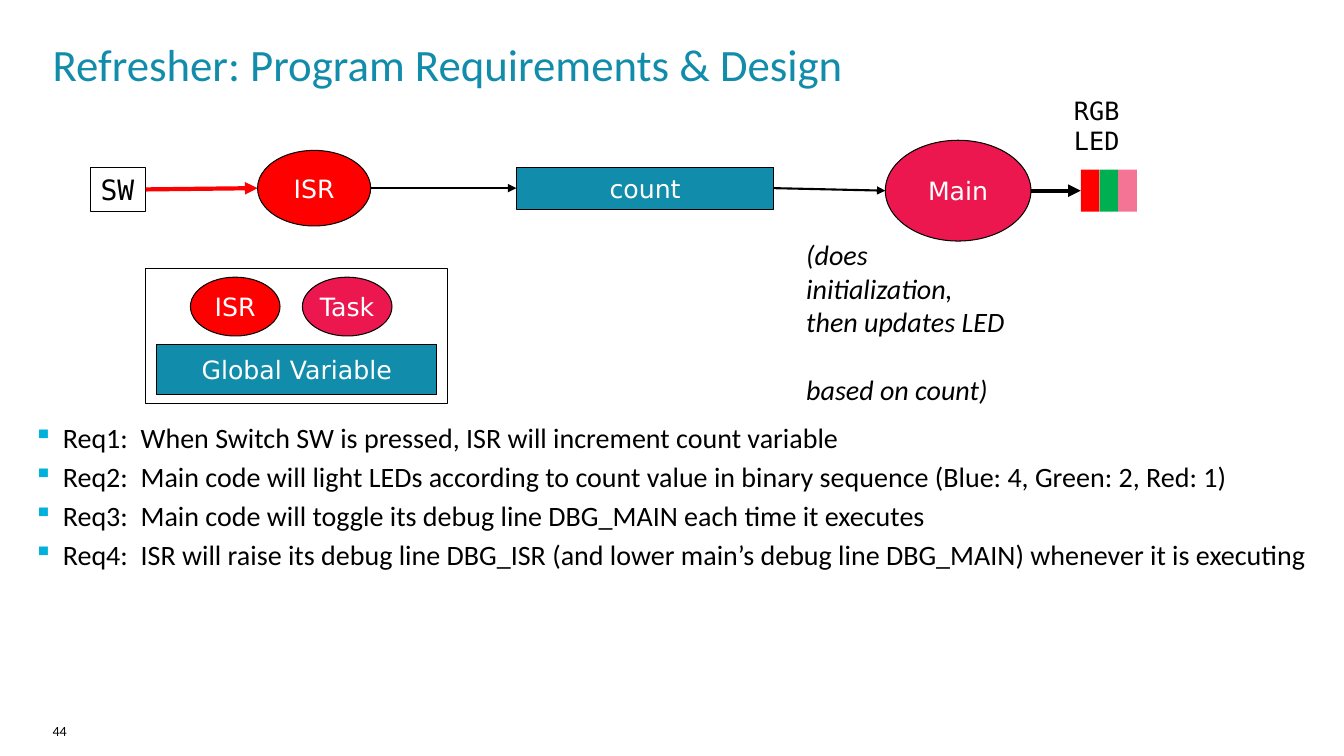
import pptx
import pptx.dml.color
import pptx.enum.shapes
import pptx.enum.text
import pptx.oxml
import pptx.oxml.ns
import pptx.util

SHAPE = pptx.enum.shapes.MSO_SHAPE
ANCHOR = pptx.enum.text.MSO_ANCHOR
ALIGN = pptx.enum.text.PP_ALIGN
RED, PINK, TEAL, BLACK, WHITE = "FF0000", "ED174F", "128CAB", "000000", "FFFFFF"


def colour(code):
    return pptx.dml.color.RGBColor.from_string(code)


def add_xml(parent, markup):
    parent.append(pptx.oxml.parse_xml(
        markup.replace("/>", " " + pptx.oxml.ns.nsdecls("a") + "/>")))


class Board:
    COLUMNS, ROWS = 120, 90
    BODY, LABEL, MONO = "Calibri", "DejaVu Sans", "DejaVu Sans Mono"

    def __init__(self, deck):
        self.slide = deck.slides.add_slide(deck.slide_layouts[6])
        self.column = deck.slide_width / self.COLUMNS
        self.row = deck.slide_height / self.ROWS

    def place(self, left, top, width, height):
        return (round(left * self.column), round(top * self.row),
                round(width * self.column), round(height * self.row))

    def add_words(self, paragraph, words, size, font, ink, italic=False):
        for number, line in enumerate(words.split("\n")):
            if number:
                paragraph.add_line_break()
            run = paragraph.add_run()
            run.text = line
            run.font.size = pptx.util.Pt(size)
            run.font.name = font
            run.font.italic = italic
            run.font.color.rgb = colour(ink)

    def text(self, area, lines, size, font=BODY, ink=BLACK, italic=False,
             inset=True, wrap=True, gaps=(), bullet=None):
        frame = self.slide.shapes.add_textbox(*self.place(*area)).text_frame
        frame.word_wrap = wrap
        if not inset:
            frame.margin_left = frame.margin_top = 0
            frame.margin_right = frame.margin_bottom = 0
        for number, line in enumerate(lines):
            paragraph = frame.add_paragraph() if number else frame.paragraphs[0]
            if bullet:
                self.mark(paragraph, bullet)
            if number and gaps:
                paragraph.space_before = pptx.util.Pt(gaps[number - 1])
            self.add_words(paragraph, line, size, font, ink, italic)

    def mark(self, paragraph, bullet):
        properties = paragraph._p.get_or_add_pPr()
        indent = pptx.util.Inches(0.29)
        properties.set("marL", str(indent))
        properties.set("indent", str(-indent))
        bullet_colour = pptx.oxml.parse_xml(
            f'<a:buClr {pptx.oxml.ns.nsdecls("a")}><a:srgbClr val="00B1DB"/></a:buClr>')
        properties.append(bullet_colour)
        add_xml(properties, '<a:buSzPct val="95000"/>')
        add_xml(properties, f'<a:buChar char="{bullet}"/>')

    def node(self, kind, area, fill=None, label="", size=18, font=LABEL,
             ink=WHITE, outline=True, centred=True):
        shape = self.slide.shapes.add_shape(kind, *self.place(*area))
        shape.shadow.inherit = False
        if fill:
            shape.fill.solid()
            shape.fill.fore_color.rgb = colour(fill)
        else:
            shape.fill.background()
        if outline:
            shape.line.color.rgb = colour(BLACK)
            shape.line.width = pptx.util.Pt(0.75)
        else:
            shape.line.fill.background()
        if label:
            frame = shape.text_frame
            frame.word_wrap = False
            frame.vertical_anchor = ANCHOR.MIDDLE if centred else ANCHOR.TOP
            paragraph = frame.paragraphs[0]
            paragraph.alignment = ALIGN.CENTER if centred else ALIGN.LEFT
            self.add_words(paragraph, label, size, font, ink)
        return shape

    def arrow(self, source, target, ink=BLACK, weight=1.5):
        link = self.slide.shapes.add_connector(
            pptx.enum.shapes.MSO_CONNECTOR.STRAIGHT,
            source.left + source.width, source.top + source.height // 2,
            target.left, target.top + target.height // 2)
        if source.auto_shape_type == SHAPE.RECTANGLE:
            link.begin_connect(source, 3)
        if target.auto_shape_type == SHAPE.RECTANGLE:
            link.end_connect(target, 1)
        link.line.color.rgb = colour(ink)
        link.line.width = pptx.util.Pt(weight)
        add_xml(link.line._get_or_add_ln(), '<a:tailEnd type="triangle"/>')
        add_xml(link._element.spPr, "<a:effectLst/>")


def main():
    deck = pptx.Presentation()
    deck.slide_width = pptx.util.Inches(13.33)
    deck.slide_height = pptx.util.Inches(7.5)
    board = Board(deck)

    board.text((4.7, 86, 12.8, 3.1), ["44"], 10, inset=False)
    board.text((4.7, 4.4, 109.8, 7.6), ["Refresher: Program Requirements & Design"],
               32, ink=TEAL, inset=False)
    requirements = [
        "Req1:  When Switch SW is pressed, ISR will increment count variable",
        "Req2:  Main code will light LEDs according to count value in binary sequence "
        "(Blue: 4, Green: 2, Red: 1)",
        "Req3:  Main code will toggle its debug line DBG_MAIN each time it executes",
        "Req4:  ISR will raise its debug line DBG_ISR (and lower main’s debug line "
        "DBG_MAIN) whenever it is executing",
    ]
    board.text((3, 50, 114, 34), requirements, 20, inset=False,
               gaps=(4, 4, 4), bullet="▪")

    switch = board.node(SHAPE.RECTANGLE, (8.1, 19.9, 4.9, 5.3), None, "SW", 20,
                        board.MONO, BLACK, centred=False)
    isr = board.node(SHAPE.OVAL, (23, 17.9, 10.1, 9), RED, "ISR")
    count = board.node(SHAPE.RECTANGLE, (46.1, 19.9, 23, 5), TEAL, "count")
    main_code = board.node(SHAPE.OVAL, (79.05, 16.7, 13, 12), PINK, "Main")
    lamp_width = 1.67
    lamps = [board.node(SHAPE.RECTANGLE,
                        (96.5 + number * lamp_width, 20.2, lamp_width, 5),
                        fill, outline=False)
             for number, fill in enumerate((RED, "00B050", "F47495"))]

    board.arrow(switch, isr, RED, 3)
    board.arrow(isr, count)
    board.arrow(count, main_code)
    board.arrow(main_code, lamps[0], weight=3)

    board.text((95, 10.7, 6, 8.5), ["RGB\nLED"], 18, board.MONO, wrap=False)
    board.text((71.1, 27.7, 19.65, 20),
               ["(does initialization,", "then updates LED", "based on count)"],
               20, italic=True, gaps=(0, 24))

    board.node(SHAPE.RECTANGLE, (14, 41, 25, 6), TEAL, "Global Variable")
    board.node(SHAPE.OVAL, (17, 33, 8, 7), RED, "ISR")
    board.node(SHAPE.OVAL, (27, 33, 8, 7), PINK, "Task")
    board.node(SHAPE.RECTANGLE, (13, 32, 27, 16))

    deck.save("out.pptx")


if __name__ == "__main__":
    main()
